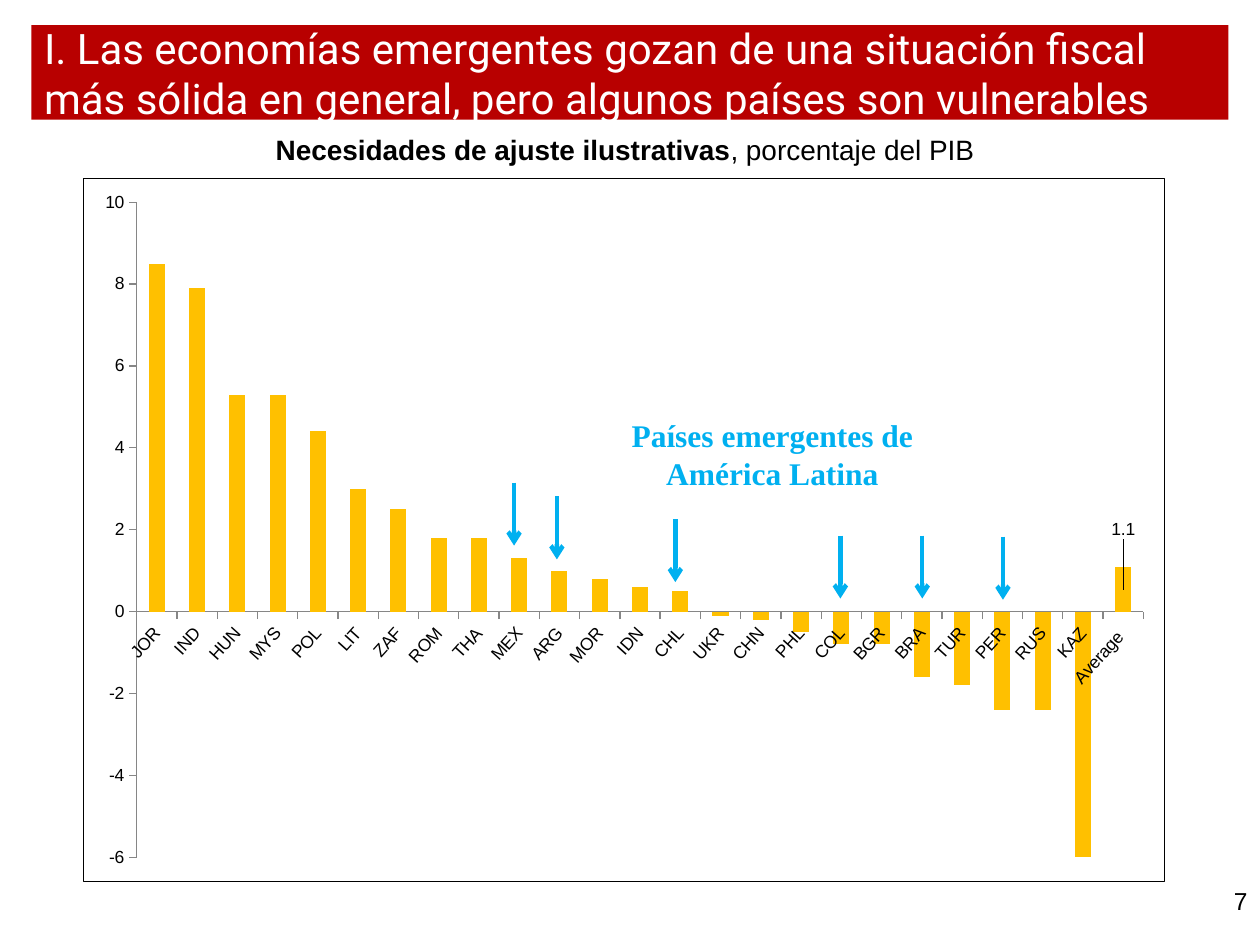
from lxml import etree
from pptx import Presentation
from pptx.chart.data import CategoryChartData
from pptx.dml.color import RGBColor
from pptx.enum.chart import XL_CHART_TYPE, XL_TICK_MARK
from pptx.enum.shapes import MSO_CONNECTOR, MSO_SHAPE
from pptx.enum.text import MSO_ANCHOR, PP_ALIGN
from pptx.oxml import parse_xml
from pptx.oxml.ns import nsdecls, qn
from pptx.util import Inches, Pt

COLORS = {"band": "B80000", "title": "FFFFFF", "text": "000000",
          "bar": "FFC000", "latin": "00B0F0", "axis": "868686"}

TITLE = ("I. Las economías emergentes gozan de una situación fiscal más sólida "
         "en general, pero algunos países son vulnerables")
SUBTITLE = [("Necesidades de ajuste ilustrativas", True), (", porcentaje del PIB", False)]
LATIN_LABEL = ["Países emergentes de", "América Latina"]
PAGE_NUMBER = "7"
AVERAGE_LABEL = "1.1"

ADJUSTMENT_NEEDS = [
    ("JOR", 8.5), ("IND", 7.9), ("HUN", 5.3), ("MYS", 5.3), ("POL", 4.4),
    ("LIT", 3), ("ZAF", 2.5), ("ROM", 1.8), ("THA", 1.8), ("MEX", 1.3),
    ("ARG", 1), ("MOR", 0.8), ("IDN", 0.6), ("CHL", 0.5), ("UKR", -0.1),
    ("CHN", -0.2), ("PHL", -0.5), ("COL", -0.8), ("BGR", -0.8), ("BRA", -1.6),
    ("TUR", -1.8), ("PER", -2.4), ("RUS", -2.4), ("KAZ", -6.1), ("Average ", 1.1),
]
# Left and top of the arrow over each Latin American country
LATIN_ARROWS = {"MEX": (4.08, 3.83), "ARG": (4.42, 3.94), "CHL": (5.36, 4.12),
                "COL": (6.67, 4.25), "BRA": (7.32, 4.25), "PER": (7.96, 4.26)}
ARROW_LENGTH = 0.5

CHART_WIDTH, CHART_HEIGHT = 8.59, 5.59
PLOT_LEFT, PLOT_TOP, PLOT_WIDTH, PLOT_HEIGHT = 0.42, 0.19, 8, 5.21
AVERAGE_LABEL_RISE = 0.47
COUNTRY_LABEL_ANGLE = -48


def rgb(name):
    return RGBColor.from_string(COLORS[name])


def style(font, size, color, name="Arial", bold=False):
    font.size, font.name, font.bold = Pt(size), name, bold
    font.color.rgb = rgb(color)


def add_text_box(slide, left, top, width, height, align):
    """Return the first paragraph of a new wrapping text box."""
    box = slide.shapes.add_textbox(Inches(left), Inches(top), Inches(width), Inches(height))
    box.text_frame.word_wrap = True
    paragraph = box.text_frame.paragraphs[0]
    paragraph.alignment = align
    return paragraph


def add_title(slide):
    band = slide.shapes.add_shape(MSO_SHAPE.RECTANGLE, Inches(0.25), Inches(0.2),
                                  Inches(9.5), Inches(0.75))
    band.shadow.inherit = False
    band.fill.solid()
    band.fill.fore_color.rgb = rgb("band")
    band.line.fill.background()
    title = slide.shapes.title
    title._element.addprevious(band._element)
    title.left, title.top = Inches(0.25), Inches(-0.05)
    title.width, title.height = Inches(9.5), Inches(1.25)
    title.text_frame.word_wrap = True
    title.text_frame.vertical_anchor = MSO_ANCHOR.MIDDLE
    paragraph = title.text_frame.paragraphs[0]
    paragraph.alignment = PP_ALIGN.LEFT
    run = paragraph.add_run()
    run.text = TITLE
    style(run.font, 24, "title", "Roboto")


def manual_layout(**values):
    items = "".join(f'<c:{key} val="{value}"/>' for key, value in values.items())
    return parse_xml(f'<c:layout {nsdecls("c")}><c:manualLayout>{items}'
                     '</c:manualLayout></c:layout>')


def add_chart(slide):
    data = CategoryChartData(number_format="0.0")
    data.categories = [country for country, _ in ADJUSTMENT_NEEDS]
    data.add_series("Series 1", [need for _, need in ADJUSTMENT_NEEDS])
    chart = slide.shapes.add_chart(XL_CHART_TYPE.COLUMN_STACKED, Inches(0.66), Inches(1.41),
                                   Inches(CHART_WIDTH), Inches(CHART_HEIGHT), data).chart
    chart.has_legend = chart.has_title = False
    style(chart.font, 10, "text")

    plot = chart.plots[0]
    plot.gap_width, plot.overlap, plot.vary_by_categories = 150, 100, False
    needs = plot.series[0]
    needs.invert_if_negative = False
    needs.format.fill.solid()
    needs.format.fill.fore_color.rgb = rgb("bar")

    for axis in (chart.category_axis, chart.value_axis):
        axis.has_major_gridlines = False
        axis.major_tick_mark = XL_TICK_MARK.OUTSIDE
        axis.minor_tick_mark = XL_TICK_MARK.NONE
        axis.format.line.color.rgb = rgb("axis")
        style(axis.tick_labels.font, 10, "text")
    country_body = chart.category_axis._element.find(".//" + qn("a:bodyPr"))
    country_body.set("rot", str(COUNTRY_LABEL_ANGLE * 60000))
    values = chart.value_axis
    values.minimum_scale, values.maximum_scale, values.major_unit = -6, 10, 2
    values.tick_labels.number_format = "0"
    values.tick_labels.number_format_is_linked = False

    average = needs.points[len(ADJUSTMENT_NEEDS) - 1].data_label
    label_run = average.text_frame.paragraphs[0].add_run()
    label_run.text = AVERAGE_LABEL
    style(label_run.font, 10, "text")
    label_index = needs._element.find(".//" + qn("c:dLbl")).find(qn("c:idx"))
    label_index.addnext(manual_layout(x=0, y=-AVERAGE_LABEL_RISE / CHART_HEIGHT))

    plot_area = plot._element.getparent()
    old_layout = plot_area.find(qn("c:layout"))
    if old_layout is not None:
        plot_area.remove(old_layout)
    plot_area.insert(0, manual_layout(
        layoutTarget="inner", xMode="edge", yMode="edge",
        x=PLOT_LEFT / CHART_WIDTH, y=PLOT_TOP / CHART_HEIGHT,
        w=PLOT_WIDTH / CHART_WIDTH, h=PLOT_HEIGHT / CHART_HEIGHT))
    border = parse_xml(
        f'<c:spPr {nsdecls("c", "a")}><a:noFill/><a:ln w="{Pt(0.75)}"><a:solidFill>'
        f'<a:srgbClr val="{COLORS["text"]}"/></a:solidFill></a:ln></c:spPr>')
    plot_area.getparent().addnext(border)


def add_arrow(slide, left, top):
    arrow = slide.shapes.add_connector(MSO_CONNECTOR.STRAIGHT, Inches(left), Inches(top),
                                       Inches(left), Inches(top + ARROW_LENGTH))
    arrow.line.color.rgb = rgb("latin")
    arrow.line.width = Pt(2.5)
    etree.SubElement(arrow.line._get_or_add_ln(), qn("a:tailEnd"), type="arrow")
    etree.SubElement(arrow._element.spPr, qn("a:effectLst"))


def main():
    prs = Presentation()
    prs.slide_width, prs.slide_height = Inches(10), Inches(7.5)
    slide = prs.slides.add_slide(prs.slide_layouts[5])
    add_title(slide)
    add_chart(slide)

    page = add_text_box(slide, 7.67, 6.98, 2.33, 0.52, PP_ALIGN.RIGHT).add_run()
    page.text = PAGE_NUMBER
    style(page.font, 14, "text")

    subtitle = add_text_box(slide, 1.75, 1, 6.42, 0.37, PP_ALIGN.CENTER)
    for text, bold in SUBTITLE:
        run = subtitle.add_run()
        run.text = text
        style(run.font, 16, "text", bold=bold)

    for left, top in LATIN_ARROWS.values():
        add_arrow(slide, left, top)

    latin = add_text_box(slide, 4.17, 3.25, 3.92, 0.71, PP_ALIGN.CENTER)
    for number, line in enumerate(LATIN_LABEL):
        if number:
            latin.add_line_break()
        run = latin.add_run()
        run.text = line
        style(run.font, 18, "latin", "Times New Roman", bold=True)

    prs.save("out.pptx")


if __name__ == "__main__":
    main()
